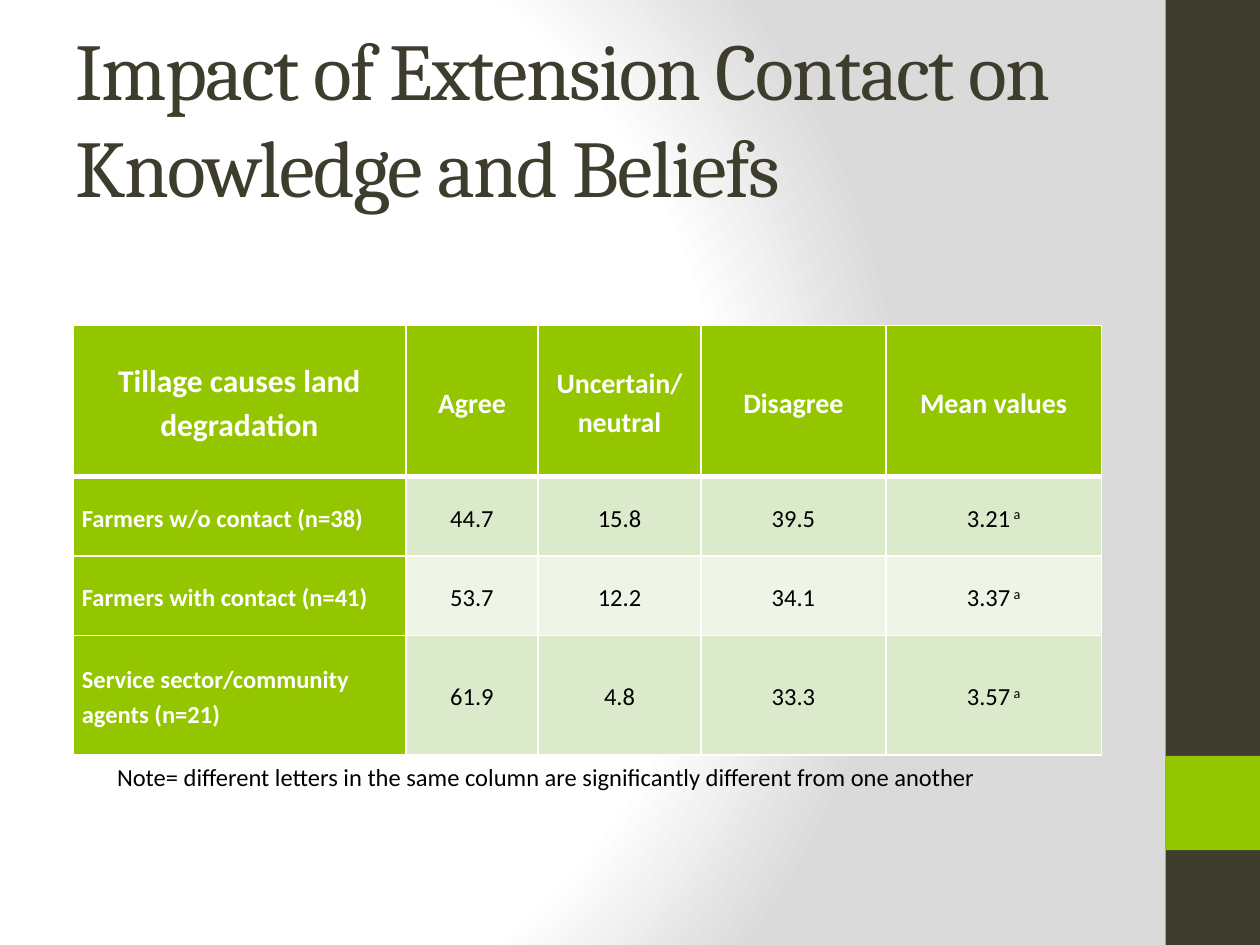
"""Builds the slide on how extension contact affects knowledge and beliefs."""
import pptx
import pptx.dml.color
import pptx.enum.shapes
import pptx.enum.text
import pptx.oxml
import pptx.oxml.ns
import pptx.util

Cm = pptx.util.Cm
Pt = pptx.util.Pt
PP_ALIGN = pptx.enum.text.PP_ALIGN
MIDDLE = pptx.enum.text.MSO_ANCHOR.MIDDLE
NAMESPACES = pptx.oxml.ns.nsdecls("a", "p")
COLORS = {
    "dark": "3E3D2D",
    "green": "94C600",
    "band": "DCEACC",
    "light_band": "EEF5E7",
    "white": "FFFFFF",
    "gray": "DADADA",
    "black": "000000",
}


def rgb(name):
    return pptx.dml.color.RGBColor.from_string(COLORS[name])


def style_font(font, name, size, color, bold=False):
    font.name = name
    font.size = Pt(size)
    font.bold = bold
    font.color.rgb = rgb(color)


presentation = pptx.Presentation()
presentation.slide_width = Cm(25.4)
presentation.slide_height = Cm(19.05)
slide = presentation.slides.add_slide(presentation.slide_layouts[5])

gradient_stops = "".join(
    f'<a:gs pos="{position * 1000}"><a:srgbClr val="{COLORS[color]}"/></a:gs>'
    for position, color in [(0, "white"), (75, "white"), (100, "gray")]
)
background = pptx.oxml.parse_xml(
    f'<p:bg {NAMESPACES}><p:bgPr><a:gradFill rotWithShape="1">'
    f'<a:gsLst>{gradient_stops}</a:gsLst><a:path path="circle">'
    '<a:fillToRect l="20000" t="50000" r="100000" b="50000"/></a:path>'
    "</a:gradFill><a:effectLst/></p:bgPr></p:bg>"
)
slide.element.cSld.insert(0, background)

for top, height, color in [(0, 19.05, "dark"), (15.24, 1.9, "green")]:
    side_bar = slide.shapes.add_shape(
        pptx.enum.shapes.MSO_SHAPE.RECTANGLE, Cm(23.5), Cm(top), Cm(1.9), Cm(height)
    )
    side_bar.shadow.inherit = False
    side_bar.fill.solid()
    side_bar.fill.fore_color.rgb = rgb(color)
    side_bar.line.fill.background()

title = slide.shapes.title
title.left, title.top, title.width, title.height = Cm(1.27), Cm(0.76), Cm(21.16), Cm(3.18)
title.text_frame.text = "Impact of Extension Contact on Knowledge and Beliefs"
title.text_frame.auto_size = pptx.enum.text.MSO_AUTO_SIZE.NONE
title.text_frame.vertical_anchor = MIDDLE
paragraph = title.text_frame.paragraphs[0]
paragraph.alignment = PP_ALIGN.LEFT
style_font(paragraph.font, "Cambria", 46, "dark")
paragraph.runs[0].font._element.set("spc", "-100")

rows = [
    ["Tillage causes land degradation", "Agree", "Uncertain/ neutral", "Disagree", "Mean values"],
    ["Farmers w/o contact (n=38)", "44.7", "15.8", "39.5", "3.21"],
    ["Farmers with contact (n=41)", "53.7", "12.2", "34.1", "3.37"],
    ["Service sector/community agents (n=21)", "61.9", "4.8", "33.3", "3.57"],
]
column_widths = [6.71, 2.67, 3.28, 3.73, 4.34]
row_heights = [3.05, 1.6, 1.6, 2.41]
table = slide.shapes.add_table(
    len(rows), len(column_widths), Cm(1.47), Cm(6.56), Cm(sum(column_widths)), Cm(sum(row_heights))
).table
for column, width in zip(table.columns, column_widths):
    column.width = Cm(width)
for row, height in zip(table.rows, row_heights):
    row.height = Cm(height)

for row_index, texts in enumerate(rows):
    for column_index, text in enumerate(texts):
        is_header = row_index == 0
        is_label = is_header or column_index == 0
        cell = table.cell(row_index, column_index)
        cell.text = text
        cell.vertical_anchor = MIDDLE
        cell.margin_left = cell.margin_right = Cm(0.18)
        cell.margin_top = cell.margin_bottom = 0
        cell.fill.solid()
        band = "band" if row_index % 2 else "light_band"
        cell.fill.fore_color.rgb = rgb("green" if is_label else band)

        paragraph = cell.text_frame.paragraphs[0]
        paragraph.line_spacing = 1.15
        paragraph.alignment = PP_ALIGN.CENTER if is_header or column_index else PP_ALIGN.LEFT
        size = 14 if not is_header else 16 if column_index else 18
        style_font(paragraph.font, "Calibri", size, "white" if is_label else "black", is_label)
        if not is_header and column_index == len(texts) - 1:
            letter = paragraph.add_run()
            letter.text = " a"
            letter.font._element.set("baseline", "30000")

        border_widths = {
            "lnL": 1, "lnR": 1, "lnT": 3 if row_index == 1 else 1, "lnB": 3 if is_header else 1,
        }
        properties = cell._tc.get_or_add_tcPr()
        for position, (side, width) in enumerate(border_widths.items()):
            border = pptx.oxml.parse_xml(
                f'<a:{side} {NAMESPACES} w="{Pt(width)}"><a:solidFill>'
                f'<a:srgbClr val="{COLORS["white"]}"/></a:solidFill></a:{side}>'
            )
            properties.insert(position, border)

note = slide.shapes.add_textbox(Cm(2.11), Cm(15.24), Cm(19.05), Cm(0.86))
note.text_frame.word_wrap = True
note.text_frame.auto_size = pptx.enum.text.MSO_AUTO_SIZE.SHAPE_TO_FIT_TEXT
note.text_frame.text = (
    "Note= different letters in the same column are significantly different from one another"
)
style_font(note.text_frame.paragraphs[0].font, "Calibri", 14, "black")

presentation.save("out.pptx")
